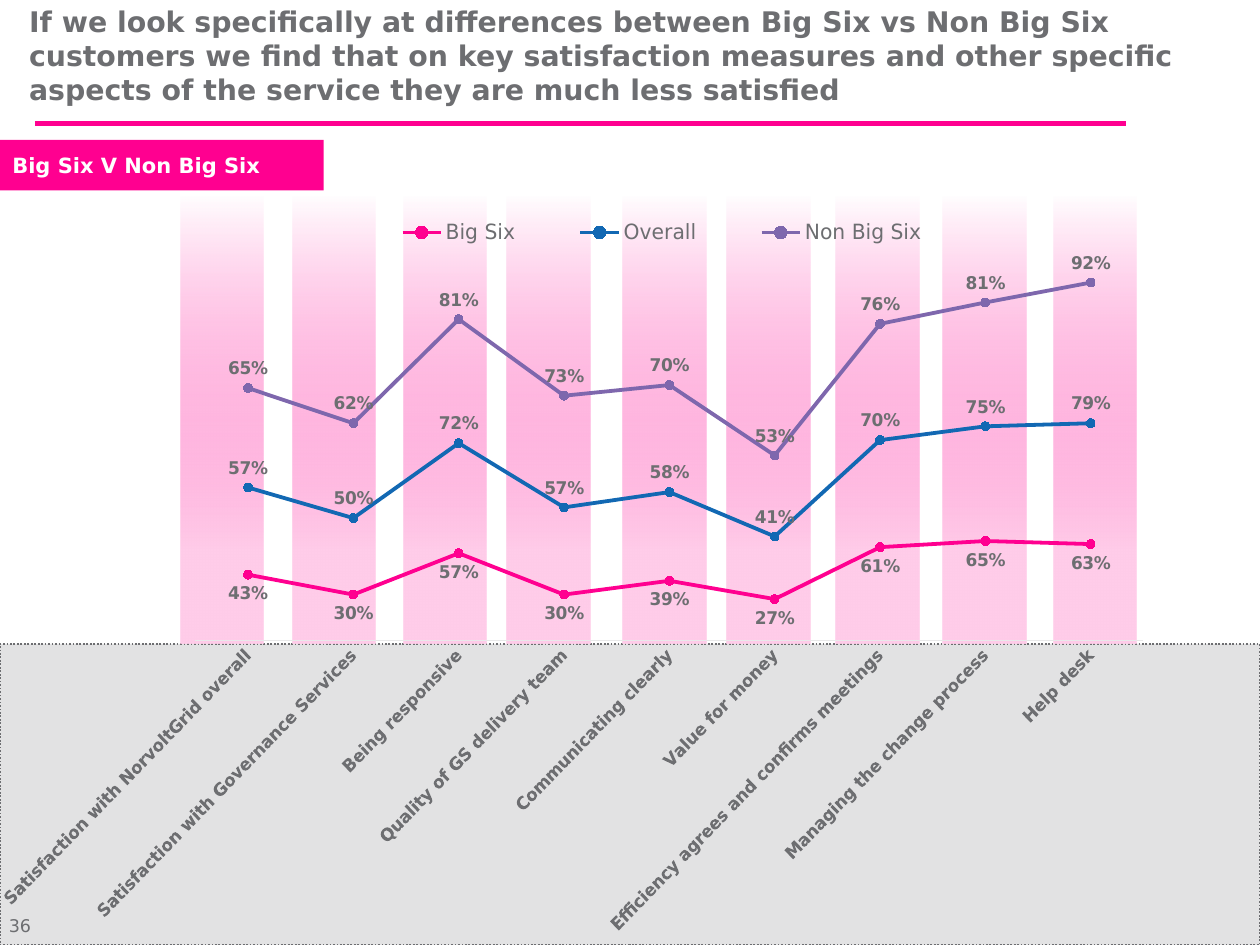
from lxml import etree
from pptx import Presentation
from pptx.chart.data import CategoryChartData
from pptx.dml.color import RGBColor
from pptx.enum.chart import (XL_CHART_TYPE, XL_LABEL_POSITION, XL_LEGEND_POSITION,
                             XL_MARKER_STYLE, XL_TICK_MARK)
from pptx.enum.dml import MSO_LINE
from pptx.enum.shapes import MSO_CONNECTOR, MSO_SHAPE
from pptx.enum.text import MSO_ANCHOR, PP_ALIGN
from pptx.oxml.ns import qn
from pptx.util import Pt

LINES = XL_CHART_TYPE.LINE_MARKERS_STACKED
ABOVE, BELOW = XL_LABEL_POSITION.ABOVE, XL_LABEL_POSITION.BELOW
BOTTOM = XL_LEGEND_POSITION.BOTTOM
CIRCLE = XL_MARKER_STYLE.CIRCLE
NO_TICK = XL_TICK_MARK.NONE
DOTS = MSO_LINE.ROUND_DOT
STRAIGHT = MSO_CONNECTOR.STRAIGHT
RECT = MSO_SHAPE.RECTANGLE
LEFT = PP_ALIGN.LEFT
MID, LOW = MSO_ANCHOR.MIDDLE, MSO_ANCHOR.BOTTOM

FONT = "DejaVu Sans"
COLORS = {"pink": "FF0090", "blue": "1268B3", "violet": "7E67AD", "text": "6D6E71",
          "panel": "E2E2E3", "axis": "E9E9EA", "white": "FFFFFF",
          "pale": "FFCCE9", "glow": "FF21A0"}

TITLE = ("If we look specifically at differences between Big Six vs Non Big Six "
         "customers we find that on key satisfaction measures and other specific "
         "aspects of the service they are much less satisfied")
TOPICS = ["Satisfaction with NorvoltGrid overall", "Satisfaction with Governance Services",
          "Being responsive", "Quality of GS delivery team", "Communicating clearly",
          "Value for money", "Efficiency agrees and confirms meetings",
          "Managing the change process", "Help desk"]
SERIES = [
    ("Big Six", "pink", BELOW, [0.43, 0.3, 0.57, 0.3, 0.39, 0.27, 0.61, 0.65, 0.63]),
    ("Overall", "blue", ABOVE, [0.57, 0.5, 0.72, 0.57, 0.58, 0.41, 0.7, 0.75, 0.79]),
    ("Non Big Six", "violet", ABOVE, [0.65, 0.62, 0.81, 0.73, 0.7, 0.53, 0.76, 0.81, 0.92]),
]
BANDS = [103, 167, 230.4, 289.4, 355.7, 415.4, 477.4, 538.6, 601.9]


def rgb(name):
    return RGBColor.from_string(COLORS[name])


def place(part, index, frac, inner=False):
    """Give a chart part a fixed place, in fractions of the chart."""
    for old in part.findall(qn("c:layout")):
        part.remove(old)
    layout = etree.Element(qn("c:layout"))
    manual = etree.SubElement(layout, qn("c:manualLayout"))
    rules = [("layoutTarget", "inner")] if inner else []
    rules += [("xMode", "edge"), ("yMode", "edge"), *zip("xywh", frac)]
    for tag, val in rules:
        etree.SubElement(manual, qn("c:" + tag)).set("val", str(val))
    part.insert(index, layout)


class Deck:
    """Holds the style and the current slide; lengths are in points."""

    def __init__(self):
        self.prs = Presentation()
        self.prs.slide_width, self.prs.slide_height = Pt(720), Pt(540)
        self.slide = self.prs.slides.add_slide(self.prs.slide_layouts[5])

    def style(self, font, size, color="text", bold=False):
        font.name, font.size, font.bold = FONT, Pt(size), bold
        font.color.rgb = rgb(color)

    def label(self, shape, text, size, color="text", bold=False, anchor=MID):
        frame = shape.text_frame
        frame.text = text
        frame.word_wrap = True
        frame.vertical_anchor = anchor
        para = frame.paragraphs[0]
        para.alignment = LEFT
        self.style(para.runs[0].font, size, color, bold)

    def title(self, text, box):
        shape = self.slide.shapes.title
        shape.left, shape.top, shape.width, shape.height = map(Pt, box)
        self.label(shape, text, 16.2, bold=True)

    def text(self, text, box, size):
        self.label(self.slide.shapes.add_textbox(*map(Pt, box)), text, size, anchor=LOW)

    def rule(self, left, right, y):
        line = self.slide.shapes.add_connector(STRAIGHT, Pt(left), Pt(y), Pt(right), Pt(y))
        line.line.color.rgb, line.line.width = rgb("pink"), Pt(3)
        etree.SubElement(line._element.spPr, qn("a:effectLst"))

    def rect(self, box, fill, border=None):
        shape = self.slide.shapes.add_shape(RECT, *map(Pt, box))
        shape.shadow.inherit = False
        shape.fill.solid()
        shape.fill.fore_color.rgb = rgb(fill)
        if border:
            shape.line.color.rgb, shape.line.width = rgb(border), Pt(1)
            shape.line.dash_style = DOTS
        else:
            shape.line.fill.background()
        return shape

    def bands(self, lefts, top, width, height):
        """Group of columns that fade out towards the top."""
        group = self.slide.shapes.add_group_shape()
        for left in lefts:
            band = group.shapes.add_shape(RECT, Pt(left), Pt(top), Pt(width), Pt(height))
            band.shadow.inherit = False
            band.line.fill.background()
            band.fill.gradient()
            band.fill.gradient_angle = 90
            stops = band.fill.gradient_stops
            for stop, spot, name in zip(stops, (0.21, 1), ("pale", "glow")):
                stop.position, stop.color.rgb = spot, rgb(name)
            last = list(band._element.spPr.iter(qn("a:srgbClr")))[-1]
            etree.SubElement(last, qn("a:alpha")).set("val", "0")

    def chart(self, box, topics, rows):
        data = CategoryChartData(number_format="0%")
        data.categories = topics
        for name, _, _, vals in rows:
            data.add_series(name, vals)
        chart = self.slide.shapes.add_chart(LINES, *map(Pt, box), data).chart
        chart.has_title = False
        self.style(chart.font, 10)
        self.axes(chart)
        for line, (_, color, pos, _) in zip(chart.plots[0].series, rows):
            self.line(line, color, pos)
        chart.has_legend = True
        chart.legend.position = BOTTOM
        chart.legend.include_in_layout = False
        self.style(chart.legend.font, 12)
        place(chart.legend._element, 1, (0.27, 0, 0.56, 0.06))
        plot = chart._chartSpace.chart.plotArea
        place(plot, 0, (0.139, 0.063, 0.835, 0.491), inner=True)

    def axes(self, chart):
        cats, vals = chart.category_axis, chart.value_axis
        cats.major_tick_mark = cats.minor_tick_mark = NO_TICK
        cats.format.line.color.rgb, cats.format.line.width = rgb("axis"), Pt(0.75)
        self.style(cats.tick_labels.font, 10, bold=True)
        cats._element.find(qn("c:txPr")).find(qn("a:bodyPr")).set("rot", "-2700000")
        vals.minimum_scale, vals.maximum_scale = 0, 2.5
        vals.has_major_gridlines = False
        vals.visible = False

    def line(self, line, color, pos):
        line.smooth = False
        line.format.line.color.rgb, line.format.line.width = rgb(color), Pt(2.25)
        mark = line.marker
        mark.style, mark.size = CIRCLE, 5
        mark.format.fill.solid()
        mark.format.fill.fore_color.rgb = rgb(color)
        mark.format.line.color.rgb = rgb(color)
        labels = line.data_labels
        labels.show_value, labels.position = True, pos
        labels.number_format, labels.number_format_is_linked = "0%", False
        self.style(labels.font, 10, bold=True)


def main():
    deck = Deck()
    deck.title(TITLE, (9.4, 0.7, 710.6, 61.2))
    deck.rule(20, 643.7, 70.5)
    deck.rect((0, 368, 720, 172), "panel", "text")
    deck.bands(BANDS, 111.6, 47.8, 256.3)
    deck.chart((0, 119.5, 670.3, 445), TOPICS, SERIES)
    tag = deck.rect((0, 80, 185, 28.8), "pink")
    deck.label(tag, "Big Six V Non Big Six", 12, "white", True)
    deck.text("36", (-2, 519, 82, 19.4), 10)
    deck.prs.save("out.pptx")


if __name__ == "__main__":
    main()
